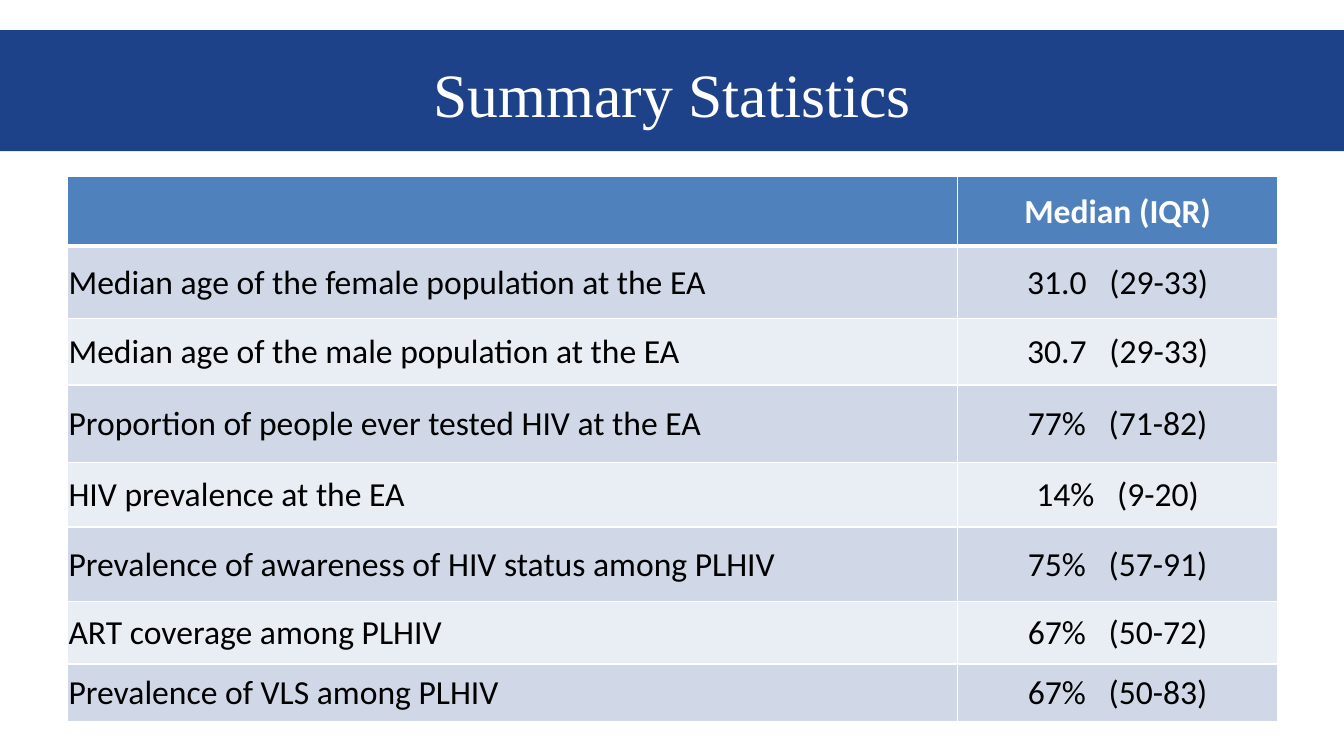
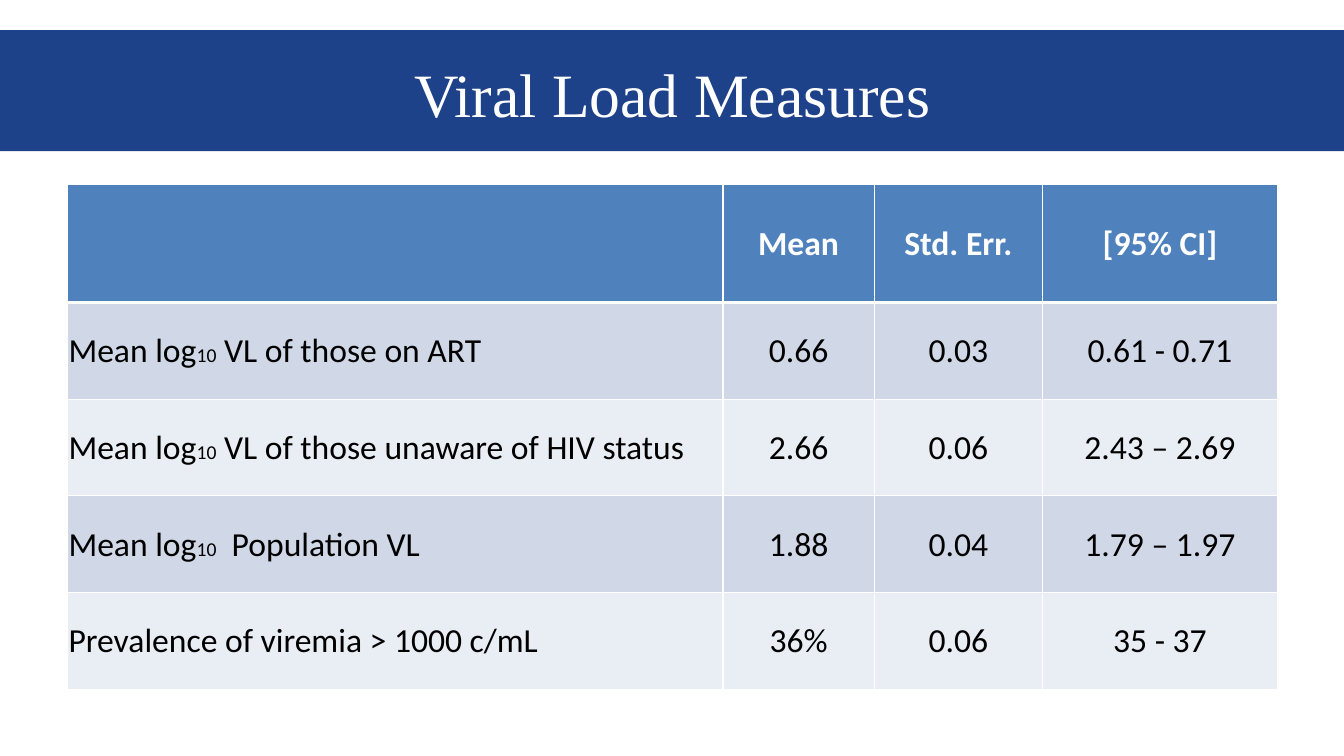
"""Build two slides of HIV survey tables under a shared title band."""
from lxml.etree import SubElement
from pptx import Presentation
from pptx.dml.color import RGBColor
from pptx.enum.shapes import MSO_SHAPE as Shape
from pptx.enum.text import MSO_ANCHOR as Anchor, PP_ALIGN as Align
from pptx.oxml.ns import qn
from pptx.util import Inches, Pt

WHITE = RGBColor(0xFF, 0xFF, 0xFF)
BLACK = RGBColor(0, 0, 0)
BAND_BLUE = RGBColor(0x1E, 0x42, 0x8A)
HEADER_BLUE = RGBColor(0x4F, 0x81, 0xBD)
ROW_FILLS = (RGBColor(0xE9, 0xED, 0xF4), RGBColor(0xD0, 0xD8, 0xE8))

TITLE_FONT, TABLE_FONT = "Times New Roman", "Calibri"
SLIDE_WIDTH, SLIDE_HEIGHT = 13.33, 7.5
MARGIN, CONTENT_WIDTH = 0.67, 12
BAND_TOP = 0.3
SUBSCRIPT_MARK = "|"

SUMMARY_ROWS = [
    ("", "Median (IQR)"),
    ("Median age of the female population at the EA", "31.0   (29-33)"),
    ("Median age of the male population at the EA", "30.7   (29-33)"),
    ("Proportion of people ever tested HIV at the EA", "77%   (71-82)"),
    ("HIV prevalence at the EA", "14%   (9-20)"),
    ("Prevalence of awareness of HIV status among PLHIV", "75%   (57-91)"),
    ("ART coverage among PLHIV", "67%   (50-72)"),
    ("Prevalence of VLS among PLHIV", "67%   (50-83)"),
]
VIRAL_LOAD_ROWS = [
    ("", "Mean", "Std. Err.", "[95% CI]"),
    ("Mean log|10| VL of those on ART", "0.66", "0.03", "0.61 - 0.71"),
    ("Mean log|10| VL of those unaware of HIV status", "2.66", "0.06", "2.43 – 2.69"),
    ("Mean log|10|  Population VL", "1.88", "0.04", "1.79 – 1.97"),
    ("Prevalence of viremia > 1000 c/mL", "36%", "0.06", "35 - 37"),
]


def format_span(span, font, size, color, bold=False):
    span.font.name = font
    span.font.size = Pt(size)
    span.font.color.rgb = color
    span.font.bold = bold


def add_titled_page(deck, title):
    page = deck.slides.add_slide(deck.slide_layouts[6])
    band = page.shapes.add_shape(
        Shape.RECTANGLE, 0, Inches(BAND_TOP), deck.slide_width, Inches(1.2))
    band.shadow.inherit = False
    band.fill.solid()
    band.fill.fore_color.rgb = BAND_BLUE
    band.line.fill.background()
    box = page.shapes.add_textbox(
        Inches(MARGIN), Inches(BAND_TOP), Inches(CONTENT_WIDTH), Inches(1.25))
    frame = box.text_frame
    frame.word_wrap = True
    frame.vertical_anchor = Anchor.MIDDLE
    frame.text = title
    para = frame.paragraphs[0]
    para.alignment = Align.CENTER
    format_span(para.runs[0], TITLE_FONT, 44, WHITE)
    return page


def set_borders(cell, top, bottom):
    properties = cell._tc.get_or_add_tcPr()
    widths = {"a:lnL": 1, "a:lnR": 1, "a:lnT": top, "a:lnB": bottom}
    for position, (tag, width) in enumerate(widths.items()):
        line = SubElement(properties, qn(tag), w=str(Pt(width)))
        fill = SubElement(line, qn("a:solidFill"))
        SubElement(fill, qn("a:srgbClr"), val=str(WHITE))
        properties.insert(position, line)


def fill_cell(cell, text, row, column):
    is_header = row == 0
    cell.fill.solid()
    cell.fill.fore_color.rgb = HEADER_BLUE if is_header else ROW_FILLS[row % 2]
    set_borders(cell, top=3 if row == 1 else 1, bottom=3 if is_header else 1)
    cell.vertical_anchor = Anchor.MIDDLE
    cell.margin_left = cell.margin_right = cell.margin_top = Inches(0.01)
    cell.margin_bottom = 0
    para = cell.text_frame.paragraphs[0]
    para.alignment = Align.CENTER if column else Align.LEFT
    if not text:
        return
    for index, part in enumerate(text.split(SUBSCRIPT_MARK)):
        span = para.add_run()
        span.text = part
        format_span(span, TABLE_FONT, 14 if index % 2 else 24,
                    WHITE if is_header else BLACK, is_header)


def add_data_table(page, top, widths, heights, rows):
    table = page.shapes.add_table(
        len(rows), len(widths), Inches(MARGIN), Inches(top),
        Inches(sum(widths)), Inches(sum(heights))).table
    table.horz_banding = False
    for column, width in zip(table.columns, widths):
        column.width = Inches(width)
    for line, height in zip(table.rows, heights):
        line.height = Inches(height)
    for row, texts in enumerate(rows):
        for column, text in enumerate(texts):
            fill_cell(table.cell(row, column), text, row, column)


def main():
    deck = Presentation()
    deck.slide_width = Inches(SLIDE_WIDTH)
    deck.slide_height = Inches(SLIDE_HEIGHT)

    page = add_titled_page(deck, "Summary Statistics")
    add_data_table(page, 1.75, [8.83, 3.17],
                   [0.69, 0.72, 0.66, 0.77, 0.64, 0.74, 0.62, 0.57], SUMMARY_ROWS)

    page = add_titled_page(deck, "Viral Load Measures")
    add_data_table(page, 1.83, [6.5, 1.5, 1.67, 2.33],
                   [1.17] + [0.96] * 4, VIRAL_LOAD_ROWS)

    deck.save("out.pptx")


if __name__ == "__main__":
    main()
